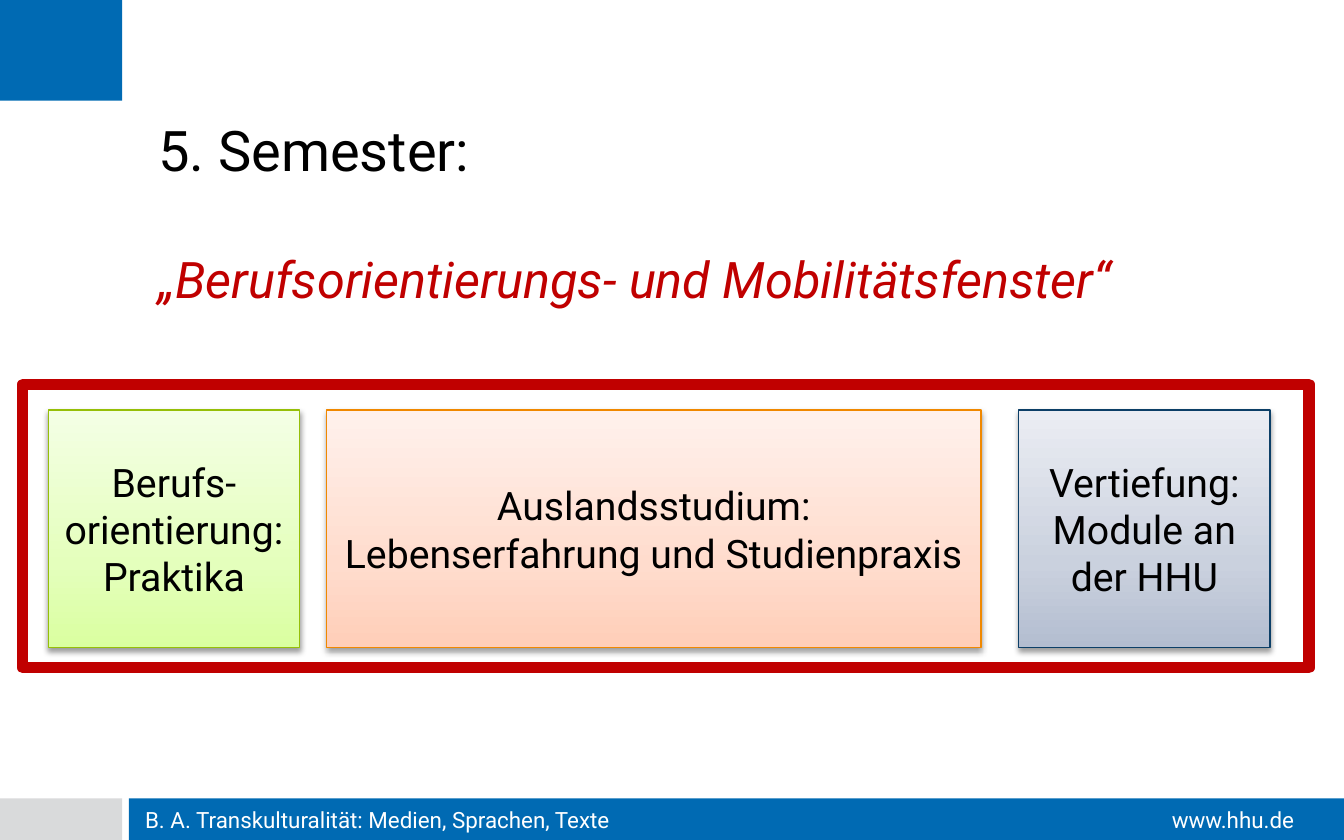
"""Build the slide about the fifth semester of a bachelor programme."""
import lxml.etree
import copy
import pptx
import pptx.dml.color
import pptx.enum.dml
import pptx.enum.shapes
import pptx.enum.text
import pptx.oxml
import pptx.oxml.ns
import pptx.util

COLUMNS, ROWS = 100, 62.5
CELL = pptx.util.Inches(0.1)
FONT = "Roboto"
COLORS = {
    "blue": "006AB3", "grey": "D9DADB", "white": "FFFFFF", "black": "000000", "red": "C00000",
    "green line": "96BF08", "orange line": "F08800", "navy line": "0C3F67",
}
GRADIENTS = {
    "green": ("DAFFA0", "E4FFBC", "F4FFE5"),
    "orange": ("FFCEB8", "FFDCCD", "FFF1EC"),
    "navy": ("B3BDD0", "CAD1DE", "EBEDF3"),
}
STOPS = (0, 0.35, 1)
CARDS = (
    (1.9, 18.7, "green", ("Berufs-", "orientierung:", "Praktika")),
    (22.6, 48.7, "orange", ("Auslandsstudium:", "Lebenserfahrung und Studienpraxis")),
    (74.1, 18.7, "navy", ("Vertiefung:", "Module an der HHU")),
)
ALIGN = pptx.enum.text.PP_ALIGN
ANCHOR = pptx.enum.text.MSO_ANCHOR


def rgb(value):
    """Return a colour object for a hex string."""
    return pptx.dml.color.RGBColor.from_string(value)


def lengths(box):
    """Turn a box in grid cells into slide lengths."""
    return [round(value * CELL) for value in box]


def inside(box, left, top, width, height):
    """Return a box whose place is counted from the corner of another box."""
    return box[0] + left, box[1] + top, width, height


def apply(target, values):
    """Set each attribute of the target from a dict."""
    for name, value in values.items():
        setattr(target, name, value)


def write(shape, lines, size, color, align=ALIGN.LEFT, anchor=ANCHOR.TOP, inset=(0.1, 0.05)):
    """Write lines of text into a shape and return the paragraphs."""
    frame = shape.text_frame
    across, down = (pptx.util.Inches(value) for value in inset)
    apply(frame, {
        "word_wrap": True, "vertical_anchor": anchor, "margin_left": across,
        "margin_right": across, "margin_top": down, "margin_bottom": down,
    })
    frame.text = "\n".join(lines)
    for paragraph in frame.paragraphs:
        paragraph.alignment = align
        apply(paragraph.font, {"name": FONT, "size": pptx.util.Pt(size)})
        paragraph.font.color.rgb = rgb(COLORS[color])
    return frame.paragraphs


def add_rectangle(slide, box, fill=None, line=None, width=0):
    """Add a plain rectangle without shadow."""
    shape = slide.shapes.add_shape(pptx.enum.shapes.MSO_SHAPE.RECTANGLE, *lengths(box))
    shape.shadow.inherit = False
    if fill:
        shape.fill.solid()
        shape.fill.fore_color.rgb = rgb(COLORS[fill])
    if line:
        shape.line.color.rgb = rgb(COLORS[line])
        shape.line.width = pptx.util.Pt(width)
    else:
        shape.line.fill.background()
    return shape


def fill_gradient(shape, colors):
    """Fill a shape with three colours running from bottom to top."""
    shape.fill.gradient()
    shape.fill.gradient_angle = 90
    stop_list = shape._element.spPr.find(".//" + pptx.oxml.ns.qn("a:gsLst"))
    stop_list.insert(1, copy.deepcopy(stop_list[0]))
    for stop, position, color in zip(shape.fill.gradient_stops, STOPS, colors):
        stop.position = position
        stop.color.rgb = rgb(color)


def add_shadow(shape):
    """Give a shape a soft shadow below it."""
    effects = shape._element.spPr.find(pptx.oxml.ns.qn("a:effectLst"))
    effects.append(pptx.oxml.parse_xml(
        f'<a:outerShdw {pptx.oxml.ns.nsdecls("a")} blurRad="{pptx.util.Pt(3.1)}" '
        f'dist="{pptx.util.Pt(1.6)}" dir="5400000" rotWithShape="0">'
        f'<a:srgbClr val="{COLORS["black"]}"><a:alpha val="38000"/></a:srgbClr></a:outerShdw>'
    ))


def add_heading(slide, box):
    """Add the semester title and its red subtitle."""
    shape = slide.shapes.add_textbox(*lengths(box))
    lines = ("5. Semester:", "„Berufsorientierungs- und Mobilitätsfenster“")
    subtitle = write(shape, lines, 30, "black")[1]
    subtitle.space_before = pptx.util.Pt(35)
    apply(subtitle.font, {"size": pptx.util.Pt(27), "italic": True})
    subtitle.font.color.rgb = rgb(COLORS["red"])


def add_options(slide, box):
    """Add the red frame with the three options in it."""
    frame = add_rectangle(slide, box, "white", "red", 6)
    outline = frame._element.spPr.find(pptx.oxml.ns.qn("a:ln"))
    lxml.etree.SubElement(outline, pptx.oxml.ns.qn("a:round"))
    for left, width, tone, lines in CARDS:
        card = add_rectangle(slide, inside(box, left, 1.9, width, 17.7), None, f"{tone} line", 0.75)
        fill_gradient(card, GRADIENTS[tone])
        add_shadow(card)
        write(card, lines, 21, "black", ALIGN.CENTER, ANCHOR.MIDDLE)


def add_footer(slide, box):
    """Add the footer bars with programme name and web address."""
    height = box[3]
    add_rectangle(slide, inside(box, 0, 0, 9.1, height), "grey")
    add_rectangle(slide, inside(box, 9.6, 0, box[2] - 9.6, height), "blue")
    labels = (
        (10.8, 60, "B. A. Transkulturalität: Medien, Sprachen, Texte", ALIGN.LEFT),
        (71.3, 25, "www.hhu.de", ALIGN.RIGHT),
    )
    for left, width, label, align in labels:
        shape = slide.shapes.add_textbox(*lengths(inside(box, left, 0, width, height)))
        write(shape, [label], 12, "white", align, ANCHOR.MIDDLE, (0, 0))


def main():
    """Build and save the presentation."""
    presentation = pptx.Presentation()
    apply(presentation, {"slide_width": round(COLUMNS * CELL), "slide_height": round(ROWS * CELL)})
    slide = presentation.slides.add_slide(presentation.slide_layouts[6])
    add_rectangle(slide, (0, 0, 9.1, 7.5), "blue")
    add_heading(slide, (10.8, 8.1, 82, 15.7))
    add_options(slide, (1.7, 28.6, 95.7, 21.1))
    add_footer(slide, (0, 59.4, COLUMNS, ROWS - 59.4))
    presentation.save("out.pptx")


if __name__ == "__main__":
    main()
